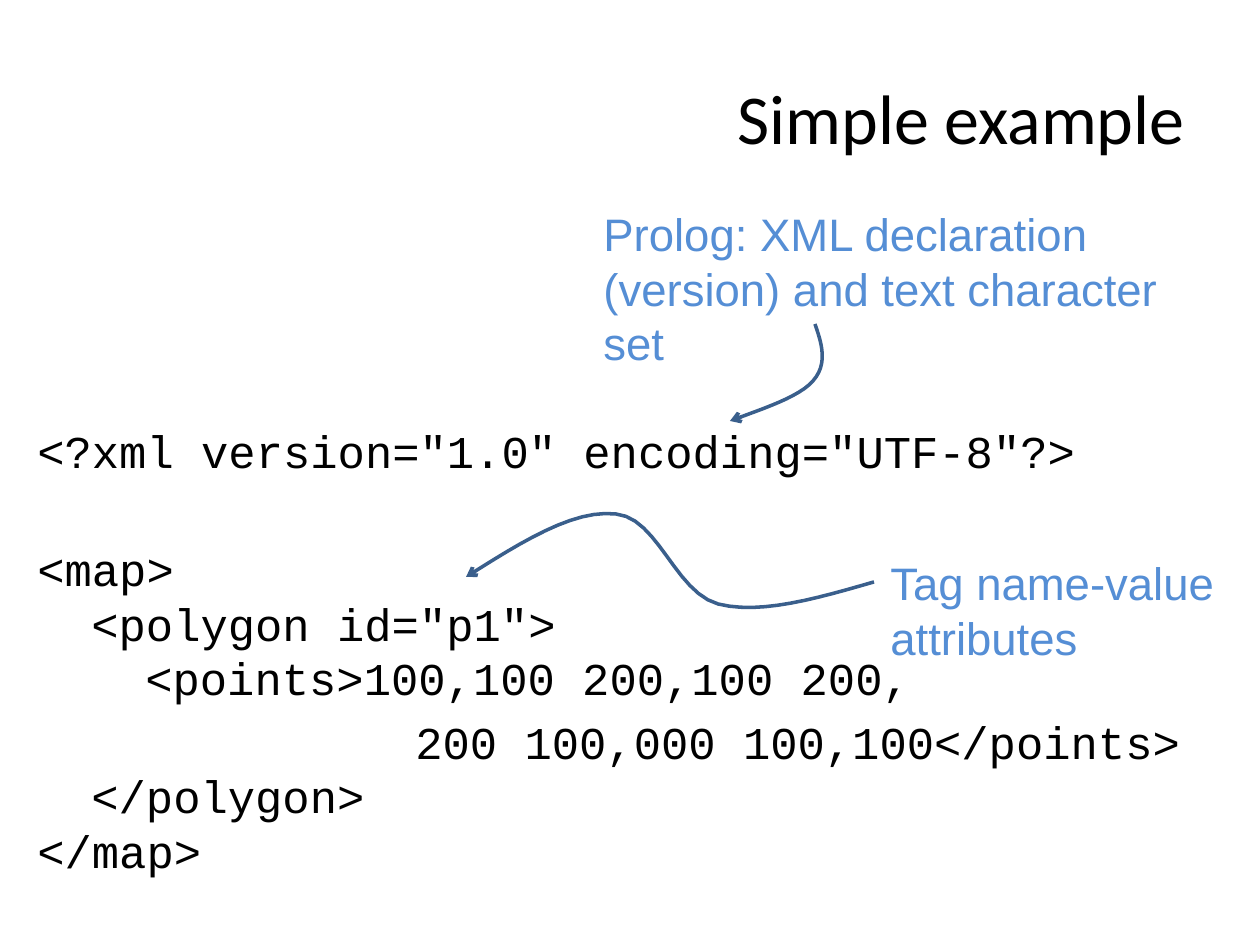
"""Build a slide that explains a simple XML example."""
import pptx
import pptx.dml.color
import pptx.enum.text
import pptx.oxml
import pptx.util
from lxml import etree

SCALE = 914400 // 126
ALIGN = pptx.enum.text.PP_ALIGN
ANCHOR = pptx.enum.text.MSO_ANCHOR
BLACK, BLUE, ARROW_BLUE = "000000", "558ED5", "3A5F8C"
CODE_SIZE, LINE_PITCH = 26, 31.15
CHARACTER = 27
CURVE_STEPS = 12

TITLE = "Simple example"
CODE = [
    ('<?xml version="1.0" encoding="UTF-8"?>', 0, 0),
    ("<map>", 0, 36.35),
    ('<polygon id="p1">', 2 * CHARACTER, 0),
    ("<points>100,100 200,100 200,", 4 * CHARACTER, 0),
    ("200 100,000 100,100</points>", 14 * CHARACTER, 5.2),
    ("</polygon>", 2 * CHARACTER, 0),
    ("</map>", 0, 0),
]
NOTES = [
    ((591, 200, 635, 178), ["Prolog: XML declaration", "(version) and text character set"]),
    ((878, 549, 382, 124), ["Tag name-value attributes"]),
]
ARROWS = [
    [(815, 324), (822, 344), (828, 364), (813, 381), (799, 397), (765, 408), (730, 421)],
    [(874, 582), (818, 598), (761, 615), (718, 604), (675, 592), (658, 518),
     (616, 514), (573, 509), (520, 543), (466, 577)],
]


def px(value):
    return round(value * SCALE)


def color(value):
    return pptx.dml.color.RGBColor.from_string(value)


def add_text(slide, box, lines, font, size, fill, align=ALIGN.LEFT, anchor=ANCHOR.TOP, pitch=None):
    """Add a text box; each line is text, indent in px and space before in points."""
    frame = slide.shapes.add_textbox(*map(px, box)).text_frame
    frame.word_wrap = True
    frame.vertical_anchor = anchor
    frame.text = "\n".join(text for text, _, _ in lines)
    for paragraph, (_, indent, space) in zip(frame.paragraphs, lines):
        paragraph.alignment = align
        paragraph.space_before = pptx.util.Pt(space)
        if pitch:
            paragraph.line_spacing = pptx.util.Pt(pitch)
        paragraph._p.get_or_add_pPr().set("marL", str(px(indent)))
        for run in paragraph.runs:
            run.font.name = font
            run.font.size = pptx.util.Pt(size)
            run.font.color.rgb = color(fill)


def curve_points(nodes):
    """Return points along a chain of cubic curves."""
    points = [nodes[0]]
    for start in range(0, len(nodes) - 1, 3):
        segment = nodes[start:start + 4]
        for step in range(1, CURVE_STEPS + 1):
            t = step / CURVE_STEPS
            weights = ((1 - t) ** 3, 3 * t * (1 - t) ** 2, 3 * t * t * (1 - t), t ** 3)
            points.append(tuple(
                sum(weight * node[axis] for weight, node in zip(weights, segment))
                for axis in (0, 1)))
    return points


def add_arrow(slide, nodes):
    """Draw a curved arrow that ends at the last node."""
    points = [(px(x), px(y)) for x, y in curve_points(nodes)]
    builder = slide.shapes.build_freeform(*points[0])
    builder.add_line_segments(points[1:], close=False)
    shape = builder.convert_to_shape()
    shape.shadow.inherit = False
    shape.fill.background()
    shape.line.color.rgb = color(ARROW_BLUE)
    shape.line.width = pptx.util.Pt(2)
    etree.SubElement(shape.line._get_or_add_ln(), pptx.oxml.ns.qn("a:tailEnd"), type="arrow")


def main():
    """Build and save the slide."""
    presentation = pptx.Presentation()
    presentation.slide_width, presentation.slide_height = px(1260), px(945)
    slide = presentation.slides.add_slide(presentation.slide_layouts[6])
    add_text(slide, (63, 38, 1134, 158), [(TITLE, 0, 0)], "Calibri", 40, BLACK,
             ALIGN.RIGHT, ANCHOR.MIDDLE)
    add_text(slide, (25, 417, 1211, 490), CODE, "Courier New", CODE_SIZE, BLACK, pitch=LINE_PITCH)
    for (box, lines), arrow in zip(NOTES, ARROWS):
        add_text(slide, box, [(line, 0, 0) for line in lines], "Arial", CODE_SIZE, BLUE,
                 pitch=LINE_PITCH)
        add_arrow(slide, arrow)
    presentation.save("out.pptx")


if __name__ == "__main__":
    main()
